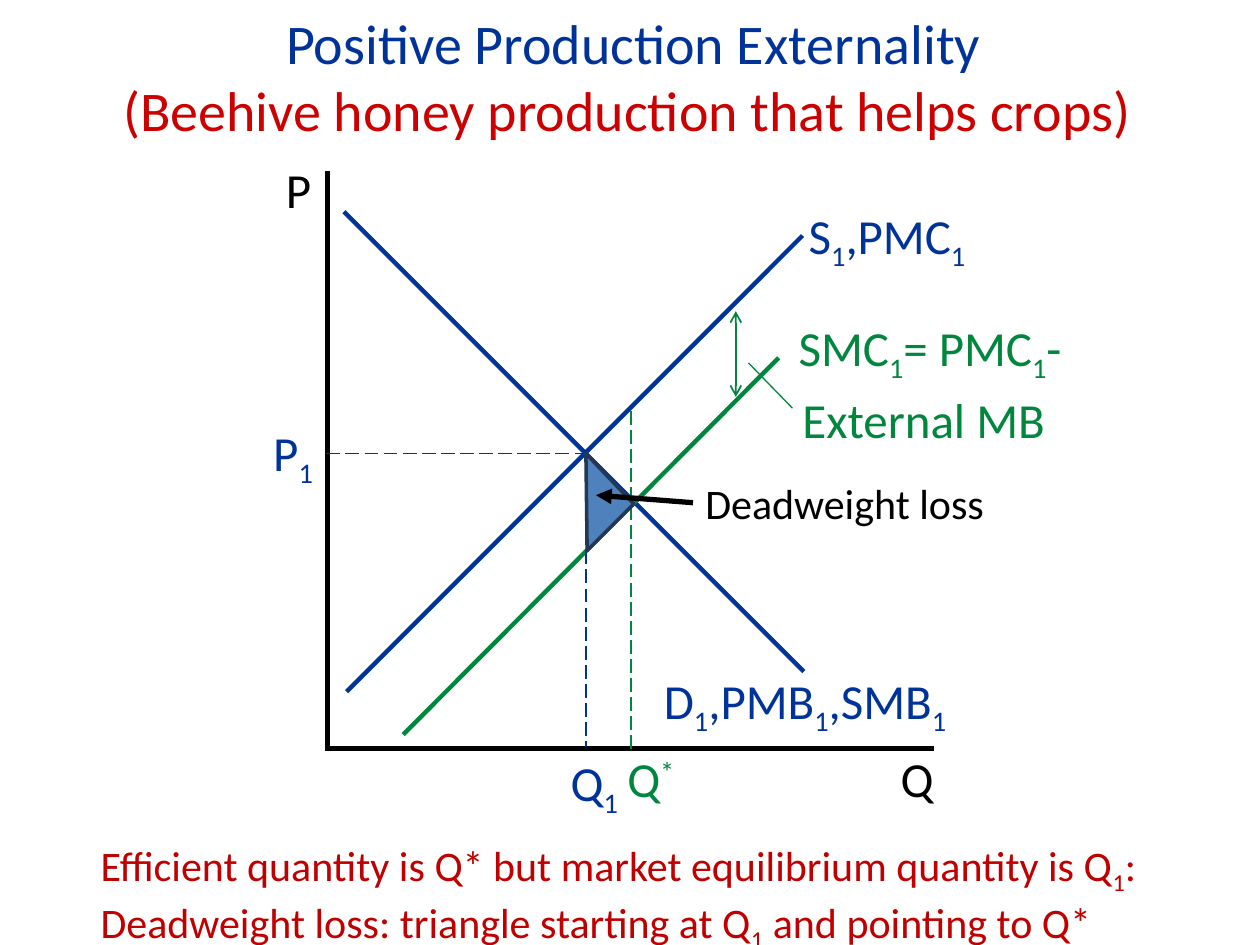
from dataclasses import dataclass

from lxml import etree
from pptx import Presentation
from pptx import util as u
from pptx.dml.color import RGBColor
from pptx.enum import dml, shapes, text
from pptx.oxml.ns import qn


@dataclass(frozen=True)
class Theme:
    font: str = "Calibri"
    private: str = "003399"
    social: str = "00863D"
    heading: str = "CC0000"
    note: str = "C00000"
    ink: str = "000000"
    loss_fill: str = "4F81BD"
    loss_edge: str = "233953"
    title_size: int = 32
    label_size: int = 28
    note_size: int = 24
    curve: float = 2.5
    guide: float = 1


THEME = Theme()


def rgb(color):
    return RGBColor.from_string(color)


def write(paragraph, wording, size, color, shift):
    """Fill a paragraph; parts between ~ marks are shifted off the baseline."""
    for index, part in enumerate(wording.split("~")):
        if not part:
            continue
        run = paragraph.add_run()
        run.text = part
        run.font.name = THEME.font
        run.font.size = u.Pt(size)
        run.font.color.rgb = rgb(color)
        if index % 2:
            run.font._element.set("baseline", str(shift * 1000))


def add_label(slide, box, lines, color, size=THEME.label_size,
              shift=-25, spacing=None, align=None, wrap=True):
    """Add a text box; lines is a list of (wording, color) or one wording."""
    label = slide.shapes.add_textbox(*map(u.Inches, box))
    frame = label.text_frame
    frame.word_wrap = wrap
    if isinstance(lines, str):
        lines = [(lines, color)]
    for index, (wording, line_color) in enumerate(lines):
        paragraph = frame.add_paragraph() if index else frame.paragraphs[0]
        paragraph.alignment = align
        paragraph.line_spacing = spacing
        write(paragraph, wording, size, line_color, shift)
    return label


def add_line(slide, start, end, color, width=THEME.curve, dashed=False,
             head=None, tail=None):
    line = slide.shapes.add_connector(
        shapes.MSO_CONNECTOR.STRAIGHT, *map(u.Inches, start + end))
    line.line.color.rgb = rgb(color)
    line.line.width = u.Pt(width)
    if dashed:
        line.line.dash_style = dml.MSO_LINE.LONG_DASH
    outline = line.line._get_or_add_ln()
    for tag, arrow in (("a:headEnd", head), ("a:tailEnd", tail)):
        if arrow:
            etree.SubElement(outline, qn(tag), type=arrow)
    etree.SubElement(line._element.spPr, qn("a:effectLst"))
    return line


def add_area(slide, corners, fill, edge):
    points = [(u.Inches(x), u.Inches(y)) for x, y in corners]
    builder = slide.shapes.build_freeform(*points[0])
    builder.add_line_segments(points[1:], close=True)
    area = builder.convert_to_shape()
    area.shadow.inherit = False
    area.fill.solid()
    area.fill.fore_color.rgb = rgb(fill)
    area.line.color.rgb = rgb(edge)
    area.line.width = u.Pt(2)


def add_title(slide):
    title = add_label(
        slide, (0.73, 0.01, 8.6, 1.18),
        [("Positive Production Externality", THEME.private),
         ("(Beehive honey production that helps crops) ", THEME.heading)],
        None, THEME.title_size, align=text.PP_ALIGN.CENTER)
    title.text_frame.vertical_anchor = text.MSO_ANCHOR.MIDDLE


def add_curves(slide):
    # Axes
    add_line(slide, (2.6, 1.36), (2.6, 5.96), THEME.ink)
    add_line(slide, (2.61, 5.94), (7.41, 5.94), THEME.ink)
    # Private supply, demand and social cost
    add_line(slide, (2.75, 5.49), (6.37, 1.87), THEME.private)
    add_line(slide, (2.73, 1.68), (6.38, 5.33), THEME.private)
    add_line(slide, (3.2, 5.83), (6.18, 2.84), THEME.social)
    # Guides to the axes
    for start, end, color in (
            ((4.65, 3.61), (4.65, 5.93), THEME.private),
            ((2.59, 3.6), (4.64, 3.6), THEME.private),
            ((5.01, 3.26), (5.01, 5.96), THEME.social)):
        add_line(slide, start, end, color, THEME.guide, dashed=True)
    # Gap between private and social cost
    add_line(slide, (5.84, 2.47), (5.84, 3.15), THEME.social, THEME.guide,
             head="arrow", tail="arrow")
    add_line(slide, (5.94, 2.88), (6.29, 3.24), THEME.social, 0.75)


def add_curve_labels(slide):
    for box, wording, color in (
            ((5.17, 5.27, 2.58, 0.57), "D~1~,PMB~1~,SMB~1~", THEME.private),
            ((6.32, 1.58, 1.5, 0.57), "S~1~,PMC~1~", THEME.private),
            ((6.24, 2.47, 3.51, 0.57), "SMC~1~= PMC~1~-", THEME.social),
            ((6.27, 3.04, 2.19, 0.57), "External MB", THEME.social),
            ((7.05, 5.89, 0.51, 0.57), "Q", THEME.ink)):
        add_label(slide, box, wording, color)
    # Tightly spaced axis marks
    for box, wording, color, shift in (
            ((2.17, 1.31, 0.45, 0.49), "P", THEME.ink, 0),
            ((2.07, 3.35, 0.58, 0.49), "P~1~", THEME.private, -25),
            ((4.43, 5.97, 0.75, 0.48), "Q~1~", THEME.private, -25),
            ((4.88, 5.98, 0.75, 0.49), "Q~*~", THEME.social, 30)):
        add_label(slide, box, wording, color, shift=shift, spacing=0.8)


def add_deadweight_loss(slide):
    add_area(slide, [(4.65, 3.6), (4.66, 4.37), (5.03, 4)],
             THEME.loss_fill, THEME.loss_edge)
    caption = add_label(slide, (5.5, 3.74, 2.43, 0.5), "Deadweight loss",
                        THEME.ink, THEME.note_size, wrap=False)
    pointer = add_line(slide, (5.5, 3.99), (4.73, 3.93), THEME.ink, 3,
                       tail="triangle")
    pointer.begin_connect(caption, 1)


def add_conclusion(slide):
    lines = ("Efficient quantity is Q* but market equilibrium quantity is Q~1~:",
             "Deadweight loss: triangle starting at Q~1~ and pointing to Q*")
    add_label(slide, (0.7, 6.61, 8.72, 0.91),
              [(line, THEME.note) for line in lines], None, THEME.note_size)


def main():
    deck = Presentation()
    deck.slide_width, deck.slide_height = u.Inches(10), u.Inches(7.5)
    slide = deck.slides.add_slide(deck.slide_layouts[6])
    add_title(slide)
    add_curves(slide)
    add_curve_labels(slide)
    add_conclusion(slide)
    add_deadweight_loss(slide)
    deck.save("out.pptx")


if __name__ == "__main__":
    main()
